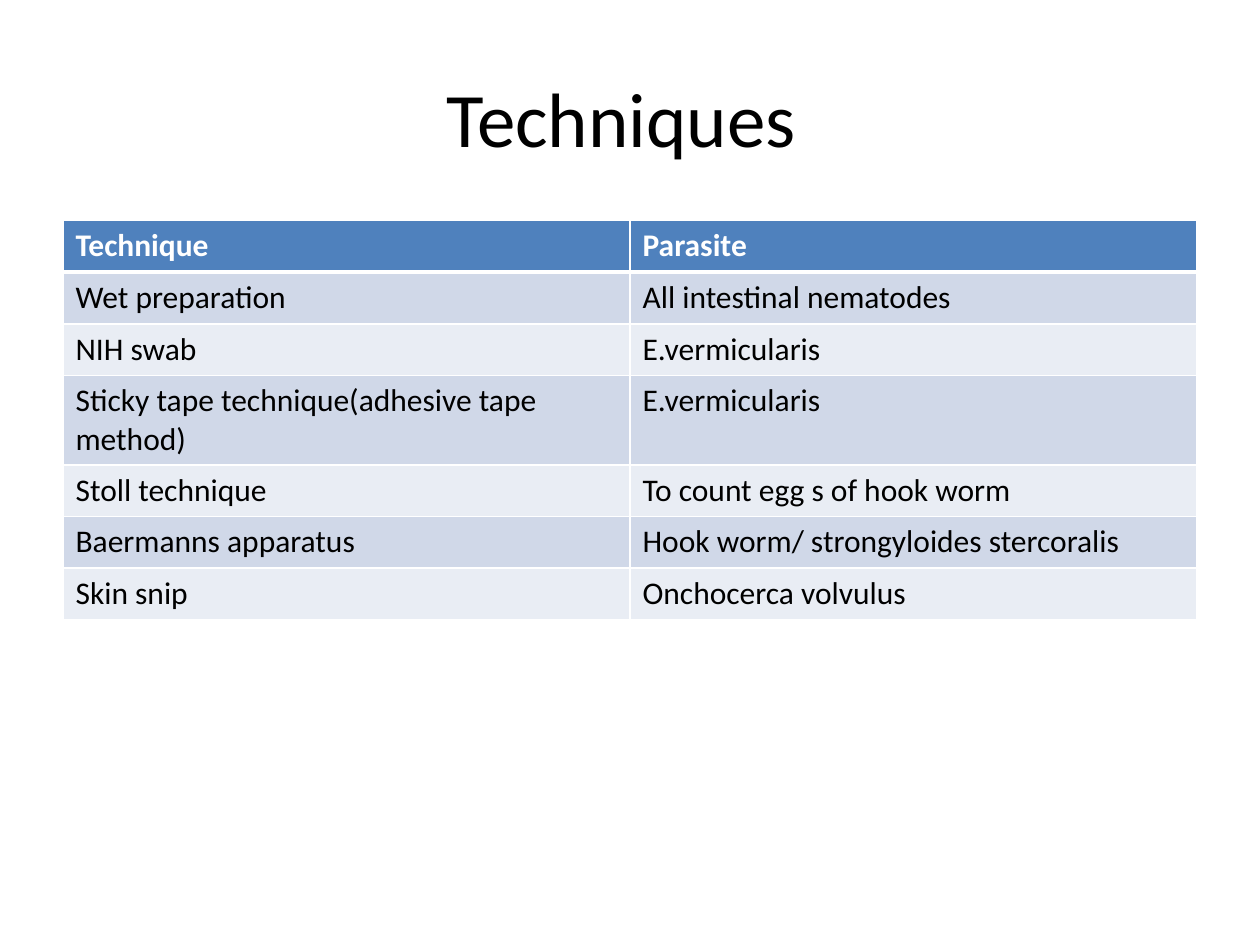
from lxml.etree import SubElement
from pptx import Presentation
from pptx.dml.color import RGBColor as RGB
from pptx.enum.text import MSO_ANCHOR as Anchor, PP_ALIGN as Align
from pptx.oxml.ns import qn
from pptx.util import Inches, Pt

TITLE = "Techniques "
HEADINGS = ("Technique", "Parasite")
TECHNIQUES = [
    ("Wet preparation", "All intestinal nematodes"),
    ("NIH swab", "E.vermicularis"),
    ("Sticky tape technique(adhesive tape method)", "E.vermicularis"),
    ("Stoll technique", "To count egg s of hook worm"),
    ("Baermanns apparatus", "Hook worm/ strongyloides stercoralis"),
    ("Skin snip", "Onchocerca volvulus"),
]
COLORS = {
    "ink": "000000", "paper": "FFFFFF", "header": "4F81BD",
    "odd": "D0D8E8", "even": "E9EDF4",
}
FORMATS = {
    "title": {"name": "Calibri", "size": Pt(44), "bold": False},
    "header": {"name": "Calibri", "size": Pt(18), "bold": True},
    "body": {"name": "Calibri", "size": Pt(18), "bold": False},
}
WIDTH, HEIGHT = Inches(10), Inches(7.5)
MARGIN = int(WIDTH * 0.05)
CONTENT_WIDTH = WIDTH - 2 * MARGIN
ROW_HEIGHT = Inches(0.41)
THIN, THICK = Pt(1), Pt(3)


def write(frame, text, style, color):
    run = frame.paragraphs[0].add_run()
    run.text = text
    for key, value in FORMATS[style].items():
        setattr(run.font, key, value)
    run.font.color.rgb = RGB.from_string(COLORS[color])


def draw_borders(cell, widths):
    properties = cell._tc.get_or_add_tcPr()
    for side, width in widths.items():
        line = SubElement(properties, qn(f"a:ln{side}"), w=str(width))
        fill = SubElement(line, qn("a:solidFill"))
        SubElement(fill, qn("a:srgbClr"), val=COLORS["paper"])


def add_title(slide):
    title = slide.shapes.title
    place = {"left": MARGIN, "top": int(HEIGHT * 0.04),
             "width": CONTENT_WIDTH, "height": Inches(1.25)}
    for key, value in place.items():
        setattr(title, key, value)
    title.text_frame.vertical_anchor = Anchor.MIDDLE
    title.text_frame.paragraphs[0].alignment = Align.CENTER
    write(title.text_frame, TITLE, "title", "ink")


def add_techniques(slide):
    rows = [HEADINGS, *TECHNIQUES]
    table = slide.shapes.add_table(
        len(rows), len(HEADINGS), MARGIN, Inches(1.75),
        CONTENT_WIDTH, ROW_HEIGHT * len(rows)).table
    for r, entries in enumerate(rows):
        if r == 0:
            style, color, band = "header", "paper", "header"
        else:
            style, color, band = "body", "ink", "odd" if r % 2 else "even"
        widths = {"L": THIN, "R": THIN,
                  "T": THICK if r == 1 else THIN,
                  "B": THICK if r == 0 else THIN}
        for c, entry in enumerate(entries):
            cell = table.cell(r, c)
            draw_borders(cell, widths)
            cell.fill.solid()
            cell.fill.fore_color.rgb = RGB.from_string(COLORS[band])
            write(cell.text_frame, entry, style, color)


def main():
    deck = Presentation()
    deck.slide_width, deck.slide_height = WIDTH, HEIGHT
    slide = deck.slides.add_slide(deck.slide_layouts[5])
    add_title(slide)
    add_techniques(slide)
    deck.save("out.pptx")


if __name__ == "__main__":
    main()
